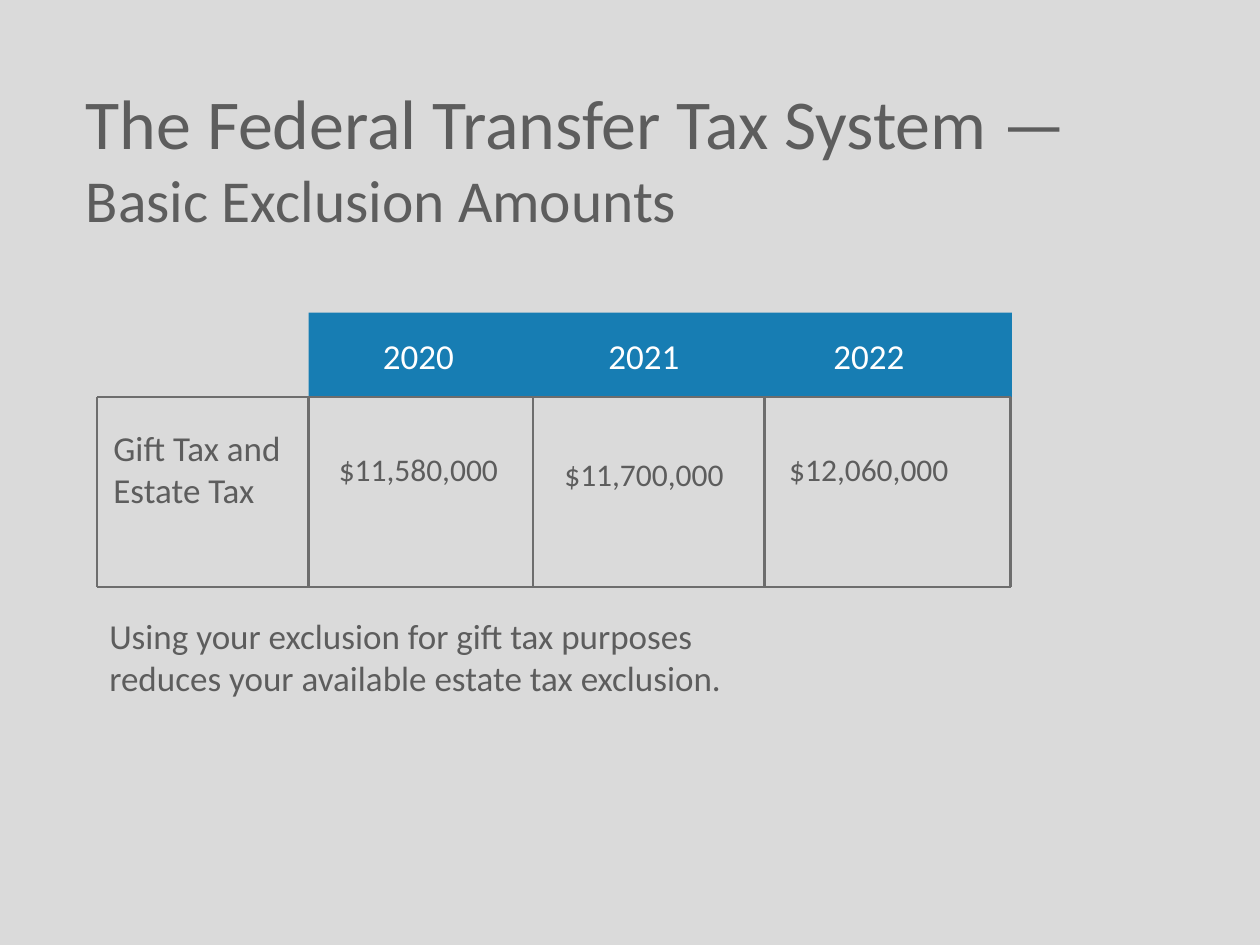
import pptx
import pptx.util
import pptx.dml.color
import pptx.enum.shapes
import pptx.enum.text
import lxml.etree

Pt = pptx.util.Pt
Align = pptx.enum.text.PP_ALIGN
Mid = pptx.enum.text.MSO_ANCHOR.MIDDLE

THEME = {
    "font": "Calibri",
    "back": "DADADA", "bar": "177DB3", "text": "5D5D5D", "rule": "6D6D6D", "white": "FFFFFF",
    "title": 40, "sub": 34, "body": 20, "sum": 18, "line": 1.5,
}
TITLE = [("The Federal Transfer Tax System — ", "title"), ("Basic Exclusion Amounts", "sub")]
YEARS = ["2020", "2021", "2022"]
LABEL = ["Gift Tax and", "Estate Tax"]
SUMS = ["$11,580,000", "$11,700,000", "$12,060,000"]
NOTE = "Using your exclusion for gift tax purposes reduces your available estate tax exclusion."

COLS = [118.8, 128.2, 129.6, 127.4]
ROWS = [38.9, 90]
EDGES = [55.5, 176.4, 304.6, 437, 577.5]
TOP, BASE = 226.8, 335.5
DROP = 9
PLAIN = "{2D5ABB26-0587-4C30-8999-92F81FD0307C}"


def shade(name):
    return pptx.dml.color.RGBColor.from_string(THEME[name])


def style(font, size, tint="text"):
    font.name = THEME["font"]
    font.size = Pt(THEME[size])
    font.color.rgb = shade(tint)


def place(shape, *box):
    shape.left, shape.top, shape.width, shape.height = map(Pt, box)


def write(cell, lines, size, tint="text", align=Align.CENTER):
    cell.vertical_anchor = Mid
    cell.margin_left = cell.margin_right = Pt(8.6)
    cell.margin_top = cell.margin_bottom = Pt(3.6)
    cell.text_frame.text = "\n".join(lines)
    for para in cell.text_frame.paragraphs:
        para.alignment = align
        style(para.font, size, tint)


def rule(shapes, *ends):
    line = shapes.add_connector(pptx.enum.shapes.MSO_CONNECTOR.STRAIGHT, *map(Pt, ends))
    line.line.color.rgb = shade("rule")
    line.line.width = Pt(THEME["line"])
    lxml.etree.SubElement(line._element.spPr, pptx.oxml.ns.qn("a:effectLst"))


def add_title(shapes):
    title = shapes.title
    place(title, 41.8, 41.8, 575.3, 95.8)
    frame = title.text_frame
    frame.auto_size = pptx.enum.text.MSO_AUTO_SIZE.NONE
    frame.vertical_anchor = Mid
    para = frame.paragraphs[0]
    para.alignment = Align.LEFT
    for text, size in TITLE:
        run = para.add_run()
        run.text = text
        style(run.font, size)


def add_bar(shapes):
    bar = shapes.add_shape(pptx.enum.shapes.MSO_SHAPE.RECTANGLE, 0, 0, 0, 0)
    place(bar, EDGES[1], 178.6, 401.8, TOP - 178.6)
    bar.shadow.inherit = False
    bar.fill.solid()
    bar.fill.fore_color.rgb = shade("bar")
    bar.line.fill.background()


def add_grid(shapes):
    box = map(Pt, (56.2, 185, sum(COLS), sum(ROWS)))
    frame = shapes.add_table(len(ROWS), len(COLS), *box)
    table = frame.table
    table.first_row = table.horz_banding = False
    table._tbl.tblPr.find(pptx.oxml.ns.qn("a:tableStyleId")).text = PLAIN
    for col, width in zip(table.columns, COLS):
        col.width = Pt(width)
    for row, height in zip(table.rows, ROWS):
        row.height = Pt(height)
    for cell in table.iter_cells():
        cell.fill.background()
    write(table.cell(1, 0), LABEL, "body", align=Align.LEFT)
    for col, (year, total) in enumerate(zip(YEARS, SUMS), 1):
        write(table.cell(0, col), [year], "body", "white")
        write(table.cell(1, col), [total], "sum")
    table.cell(1, 2).margin_top = Pt(DROP)


def add_note(shapes):
    note = shapes.add_textbox(0, 0, 0, 0)
    place(note, 55.4, 347.8, 384.5, 55.4)
    note.text_frame.word_wrap = True
    note.text_frame.text = NOTE
    style(note.text_frame.paragraphs[0].font, "body")


def main():
    deck = pptx.Presentation()
    deck.slide_width, deck.slide_height = Pt(720), Pt(540)
    slide = deck.slides.add_slide(deck.slide_layouts[5])
    slide.background.fill.solid()
    slide.background.fill.fore_color.rgb = shade("back")
    shapes = slide.shapes
    add_title(shapes)
    add_bar(shapes)
    add_grid(shapes)
    add_note(shapes)
    for x in EDGES:
        rule(shapes, x, TOP, x, BASE)
    for y in (TOP, BASE):
        rule(shapes, EDGES[0], y, EDGES[-1], y)
    deck.save("out.pptx")


if __name__ == "__main__":
    main()
